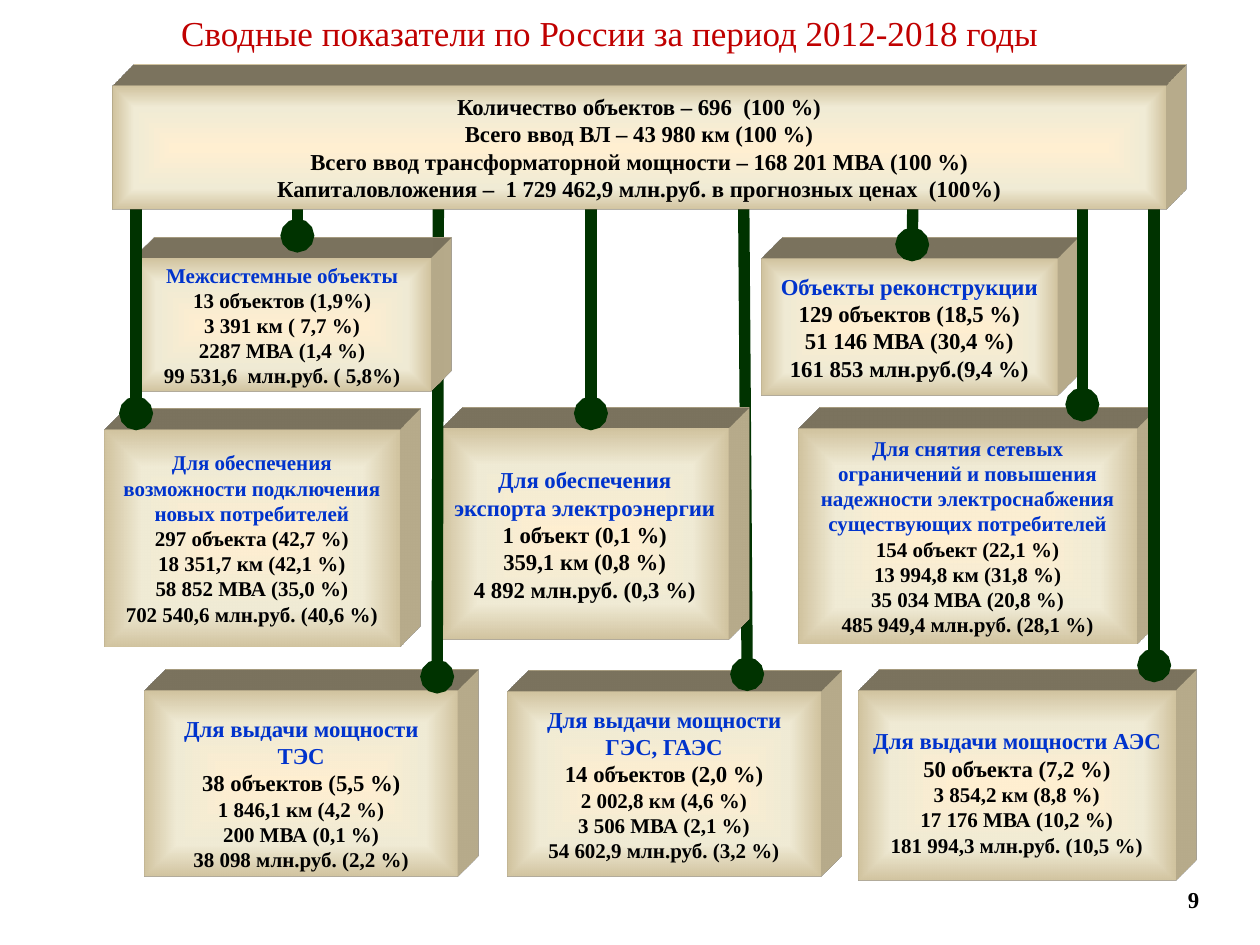
"""Build the slide of summary figures for 2012-2018."""
import pptx
import pptx.util
import pptx.dml.color
import pptx.enum.shapes
import pptx.enum.text
import pptx.oxml

WIDE, HIGH = pptx.util.Inches(10), pptx.util.Inches(7.5)
COLS, ROWS = 100, 75
BLUE, BLACK, RED, GREEN = "0033CC", "000000", "C00000", "003300"
FACE = [(0, "FFEFD1"), (65, "F0EBD5"), (100, "D1C39F")]
NS = 'xmlns:a="http://schemas.openxmlformats.org/drawingml/2006/main"'

HEADER = (8.9, 6.8, 83.6, 9.8, [
    ("Количество объектов – 696  (100 %)\n"
     "Всего ввод ВЛ – 43 980 км (100 %)\n"
     "Всего ввод трансформаторной мощности – 168 201 МВА (100 %)\n"
     "Капиталовложения –  1 729 462,9 млн.руб. в прогнозных ценах  (100%)",
     13, BLACK)])
HYDRO = (40.3, 54.9, 24.8, 14.7, [
    ("Для выдачи мощности\nГЭС, ГАЭС", 13, BLUE),
    ("14 объектов (2,0 %)", 13, BLACK),
    ("2 002,8 км (4,6 %)\n3 506 МВА (2,1 %)\n54 602,9 млн.руб. (3,2 %)", 12, BLACK)])
ATOM = (68.1, 54.8, 25.2, 15.1, [
    ("Для выдачи мощности АЭС", 13, BLUE),
    ("50 объекта (7,2 %)", 13, BLACK),
    ("3 854,2 км (8,8 %)\n17 176 МВА (10,2 %)\n181 994,3 млн.руб. (10,5 %)", 12, BLACK)])
REBUILD = (60.4, 20.5, 23.5, 10.9, [
    ("Объекты реконструкции", 13, BLUE),
    ("129 объектов (18,5 %)\n51 146 МВА (30,4 %)\n161 853 млн.руб.(9,4 %)", 13, BLACK)])
LIMITS = (63.4, 34, 26.8, 17.1, [
    ("Для снятия сетевых ограничений и повышения надежности "
     "электроснабжения существующих потребителей", 12, BLUE),
    ("154 объект (22,1 %)\n13 994,8 км (31,8 %)\n35 034 МВА (20,8 %)\n"
     "485 949,4 млн.руб. (28,1 %)", 12, BLACK)])
EXPORT = (35, 34, 22.8, 16.8, [
    ("Для обеспечения экспорта электроэнергии", 13, BLUE),
    ("1 объект (0,1 %)\n359,1 км (0,8 %)\n4 892 млн.руб. (0,3 %)", 13, BLACK)])
THERMAL = (11.5, 54.8, 24.8, 14.8, [
    ("Для выдачи мощности\nТЭС", 13, BLUE),
    ("38 объектов (5,5 %)", 13, BLACK),
    ("1 846,1 км (4,2 %)\n200 МВА (0,1 %)\n38 098 млн.руб. (2,2 %)", 12, BLACK)])
SYSTEMS = (10.6, 20.5, 23.6, 10.6, [
    ("Межсистемные объекты", 12, BLUE),
    ("13 объектов (1,9%)\n3 391 км ( 7,7 %)\n2287 МВА (1,4 %)\n"
     "99 531,6  млн.руб. ( 5,8%)", 12, BLACK)])
CLIENTS = (8.3, 34.1, 23.4, 17.2, [
    ("Для обеспечения возможности подключения новых потребителей", 12, BLUE),
    ("297 объекта (42,7 %)\n18 351,7 км (42,1 %)\n58 852 МВА (35,0 %)\n"
     "702 540,6 млн.руб. (40,6 %)", 12, BLACK)])


def across(cols):
    """Turn grid columns into a length."""
    return round(WIDE * cols / COLS)


def down(rows):
    """Turn grid rows into a length."""
    return round(HIGH * rows / ROWS)


def place(left, top, wide, high):
    """Turn a grid area into lengths."""
    return across(left), down(top), across(wide), down(high)


def paint(target, code):
    """Give a font or line a hex colour."""
    target.color.rgb = pptx.dml.color.RGBColor.from_string(code)


def node(text):
    """Parse a drawing element."""
    return pptx.oxml.parse_xml(text)


def write(frame, text, size=13, color=BLACK, bold=True, align="CENTER"):
    """Add each line of text as a paragraph of the frame."""
    for line in text.split("\n"):
        para = frame.paragraphs[-1]
        if para.runs:
            para = frame.add_paragraph()
        para.alignment = getattr(pptx.enum.text.PP_ALIGN, align)
        run = para.add_run()
        run.text = line
        run.font.name = "Times New Roman"
        run.font.size = pptx.util.Pt(size)
        run.font.bold = bold
        paint(run.font, color)


def label(slide, area, text, anchor="TOP", **style):
    """Add a text box with one style."""
    frame = slide.shapes.add_textbox(*place(*area)).text_frame
    frame.word_wrap = True
    frame.vertical_anchor = getattr(pptx.enum.text.MSO_ANCHOR, anchor)
    write(frame, text, **style)


def block(slide, left, top, wide, high, parts, drop=0):
    """Add an extruded box whose text sits lower by the drop in rows."""
    kind = pptx.enum.shapes.MSO_SHAPE.RECTANGLE
    shape = slide.shapes.add_shape(kind, *place(left, top, wide, high))
    shape.fill.background()
    shape.line.fill.background()
    shape.shadow.inherit = False
    props = shape._element.spPr
    stops = "".join(f'<a:gs pos="{pos * 1000}"><a:srgbClr val="{code}"/></a:gs>'
                    for pos, code in FACE)
    blank = props.find(pptx.oxml.ns.qn("a:noFill"))
    props.replace(blank, node(
        f'<a:gradFill {NS} rotWithShape="1"><a:gsLst>{stops}</a:gsLst><a:path path="shape">'
        '<a:fillToRect l="50000" t="50000" r="50000" b="50000"/></a:path></a:gradFill>'))
    props.append(node(
        f'<a:scene3d {NS}><a:camera prst="legacyObliqueTopRight"/>'
        '<a:lightRig rig="legacyFlat3" dir="b"/></a:scene3d>'))
    props.append(node(
        f'<a:sp3d {NS} extrusionH="430200" prstMaterial="legacyMatte">'
        '<a:bevelT w="13500" h="13500" prst="angle"/><a:bevelB w="13500" h="13500" prst="angle"/>'
        '<a:extrusionClr><a:srgbClr val="D1C39F"/></a:extrusionClr></a:sp3d>'))
    frame = shape.text_frame
    frame.word_wrap = True
    frame.vertical_anchor = pptx.enum.text.MSO_ANCHOR.MIDDLE
    frame.margin_top = down(0.5 + drop)
    frame.margin_bottom = down(0.5 - drop / 2)
    for text, size, color in parts:
        write(frame, text, size=size, color=color)


def link(slide, left, top, right, low):
    """Add a thick line with round ends."""
    kind = pptx.enum.shapes.MSO_CONNECTOR.STRAIGHT
    line = slide.shapes.add_connector(
        kind, across(left), down(top), across(right), down(low))
    line.line.width = pptx.util.Pt(6.5)
    paint(line.line, GREEN)
    edge = line.line._get_or_add_ln()
    for end in ("headEnd", "tailEnd"):
        edge.append(node(f'<a:{end} {NS} type="oval"/>'))
    line._element.spPr.append(node(f"<a:effectLst {NS}/>"))


def main():
    """Build and save the slide."""
    deck = pptx.Presentation()
    deck.slide_width, deck.slide_height = WIDE, HIGH
    slide = deck.slides.add_slide(deck.slide_layouts[6])
    for item in (HYDRO, (*ATOM, 0.7), REBUILD):
        block(slide, *item)
    link(slide, 59, 12.7, 59.3, 53.5)
    for item in (LIMITS, EXPORT, (*THERMAL, 1)):
        block(slide, *item)
    for ends in ((85.9, 12.7, 85.9, 32.1), (91.6, 14.1, 91.6, 52.8),
                 (34.8, 12.9, 34.7, 53.7), (46.9, 14.1, 46.9, 32.8)):
        link(slide, *ends)
    for item in (SYSTEMS, CLIENTS):
        block(slide, *item)
    for ends in ((10.8, 12.7, 10.8, 32.8), (72.5, 12.7, 72.4, 19.4),
                 (23.6, 12, 23.6, 18.7)):
        link(slide, *ends)
    block(slide, *HEADER)
    label(slide, (10.6, 0, 75.6, 5.2), "Сводные показатели по России за период 2012-2018 годы",
          anchor="MIDDLE", size=20, color=RED, bold=False)
    label(slide, (93.3, 69.8, 3.9, 3.2), "9", align="LEFT")
    deck.save("out.pptx")


if __name__ == "__main__":
    main()
